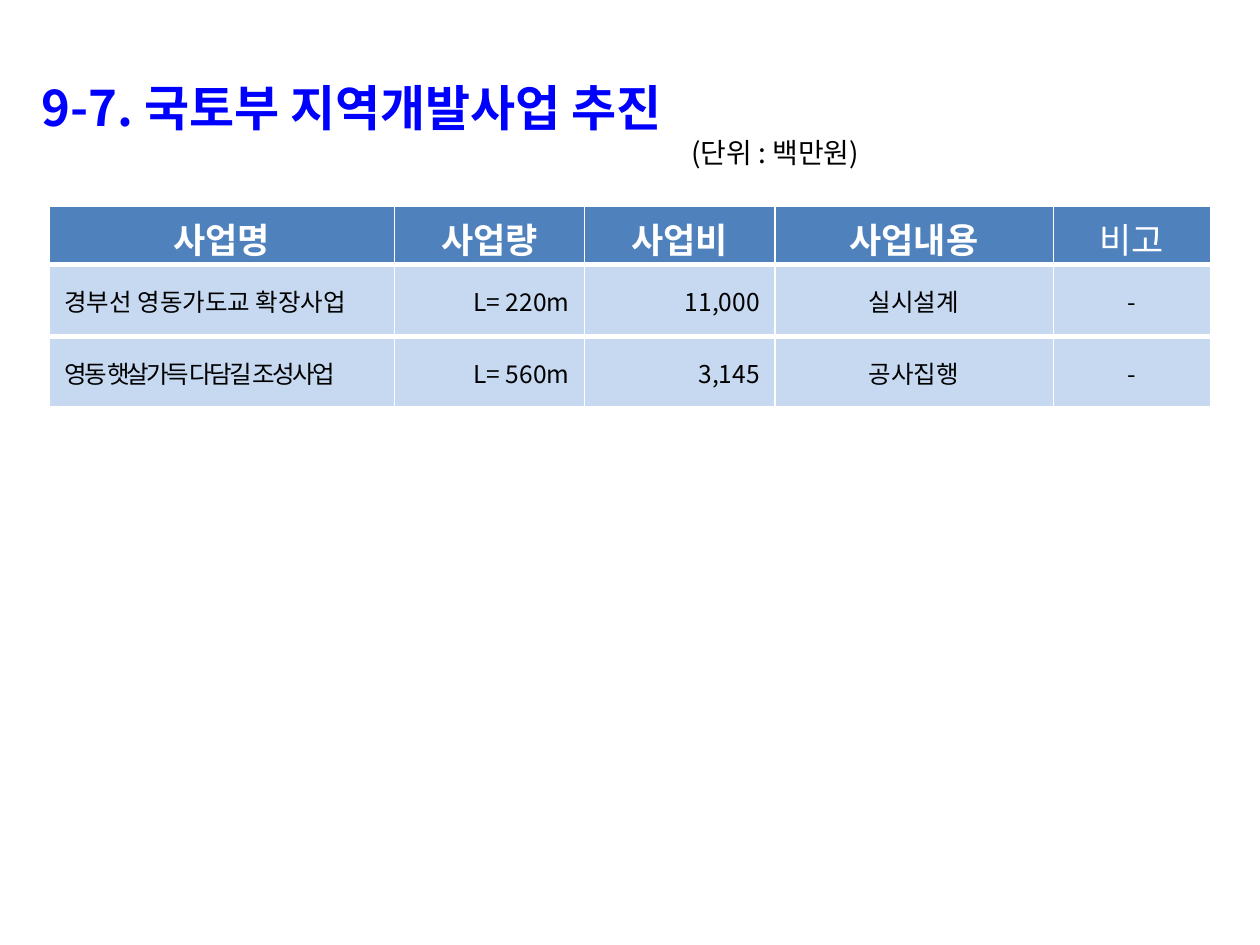
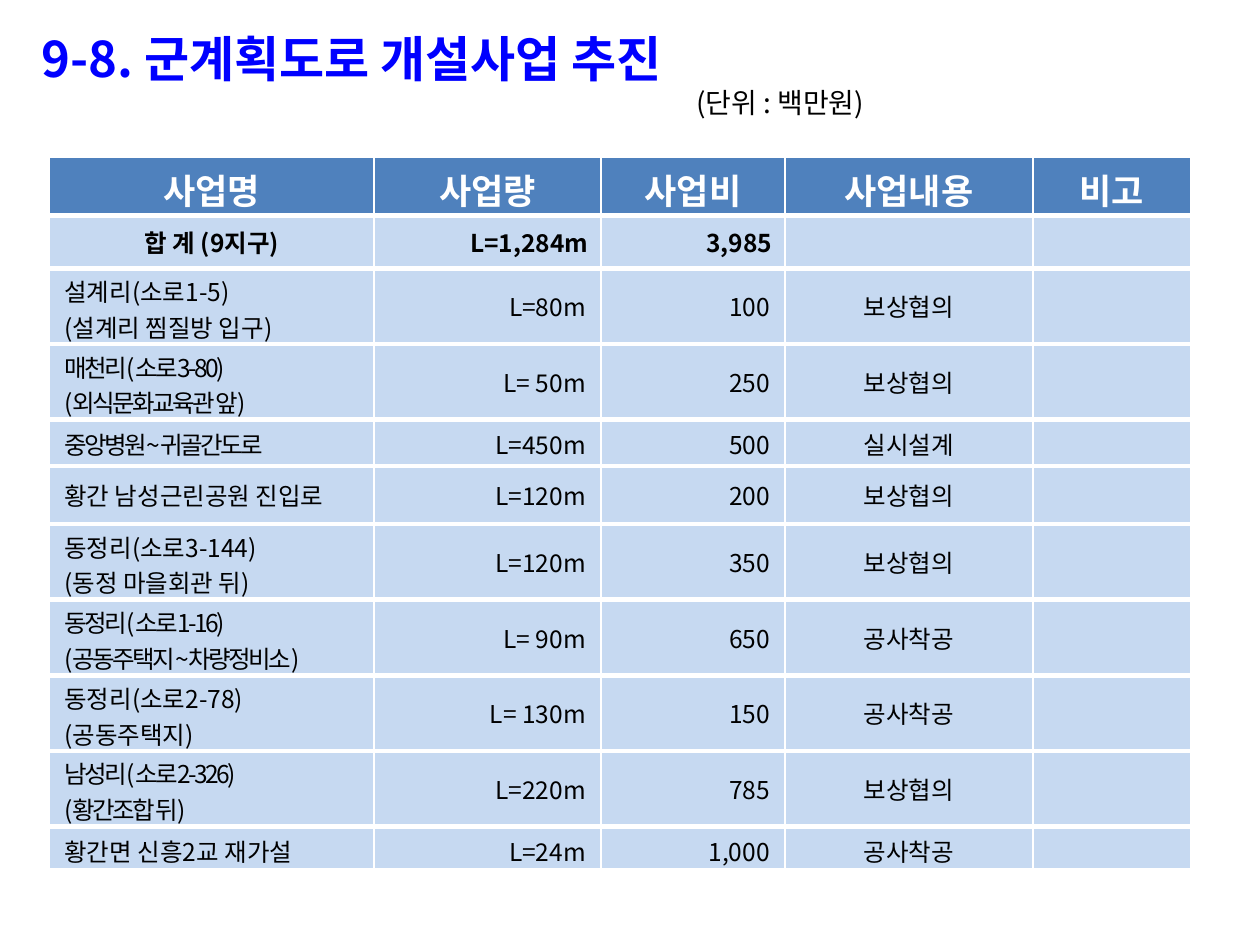
"""Build two slides of county project tables."""
from lxml.etree import SubElement
from pptx import Presentation
from pptx.dml.color import RGBColor
from pptx.enum.text import MSO_ANCHOR, PP_ALIGN
from pptx.oxml.ns import qn
from pptx.util import Inches, Pt

HEADS = ["사업명", "사업량", "사업비", "사업내용", "비고"]
UNIT = "(단위 : 백만원)"
SLIDES = [
    dict(title="9-7. 국토부 지역개발사업 추진", top=0.62, width=9.61, indent=5.16,
         cols=[2.74, 1.51, 1.51, 2.21, 1.25], heights=[0.46, 0.57, 0.57],
         light_heads={"비고"}, total=None, tight={2},
         rows=[
             ("경부선 영동가도교 확장사업", "L= 220m", "11,000", "실시설계", "-"),
             ("영동 햇살가득 다담길 조성사업", "L= 560m", "3,145", "공사집행", "-"),
         ]),
    dict(title="9-8. 군계획도로 개설사업 추진", top=0.23, width=9.45, indent=5.2,
         cols=[2.58, 1.8, 1.46, 1.97, 1.25],
         heights=[0.46, 0.42, 0.6, 0.6, 0.37, 0.46, 0.6, 0.6, 0.6, 0.6, 0.35],
         light_heads=set(), total=1, tight={3, 4, 7, 9},
         rows=[
             ("합 계 (9지구)", "L=1,284m", "3,985", "", ""),
             ("설계리(소로1-5)\n(설계리 찜질방 입구)", "L=80m", "100", "보상협의", ""),
             ("매천리(소로3-80)\n(외식문화교육관 앞)", "L= 50m", "250", "보상협의", ""),
             ("중앙병원~귀골간도로", "L=450m", "500", "실시설계", ""),
             ("황간 남성근린공원 진입로", "L=120m", "200", "보상협의", ""),
             ("동정리(소로3-144)\n(동정 마을회관 뒤)", "L=120m", "350", "보상협의", ""),
             ("동정리(소로1-16)\n(공동주택지~차량정비소)", "L= 90m", "650", "공사착공", ""),
             ("동정리(소로2-78)\n(공동주택지)", "L= 130m", "150", "공사착공", ""),
             ("남성리(소로2-326)\n(황간조합 뒤)", "L=220m", "785", "보상협의", ""),
             ("황간면 신흥2교 재가설", "L=24m", "1,000", "공사착공", ""),
         ]),
]

FONT = "Noto Sans CJK KR"
BLUE = RGBColor(0x00, 0x00, 0xFF)
BLACK = RGBColor(0x00, 0x00, 0x00)
WHITE = RGBColor(0xFF, 0xFF, 0xFF)
HEAD_FILL = RGBColor(0x4F, 0x81, 0xBD)
BODY_FILL = RGBColor(0xC6, 0xD9, 0xF1)
LEFT, CENTER, RIGHT = PP_ALIGN.LEFT, PP_ALIGN.CENTER, PP_ALIGN.RIGHT
ALIGNS = [LEFT, RIGHT, RIGHT, CENTER, CENTER]
TITLE_LEFT, TABLE_LEFT, TABLE_DROP = 0.23, 0.39, 1.02
LINE_HEIGHT, PAD = 1.45, 0.05


def write(p, text, size=14, color=BLACK, bold=False, align=LEFT, spacing=0):
    p.alignment = align
    if not text:
        SubElement(p._p, qn("a:endParaRPr"), sz=str(size * 100))
        return
    r = p.add_run()
    r.text = text
    r.font.name, r.font.size, r.font.bold = FONT, Pt(size), bold
    r.font.color.rgb = color
    rPr = r._r.get_or_add_rPr()
    SubElement(rPr, qn("a:ea"), typeface=FONT)
    if spacing:
        rPr.set("spc", str(int(spacing * 100)))


def add_borders(cell, top):
    tcPr = cell._tc.get_or_add_tcPr()
    for side, width in (("L", 1), ("R", 1), ("T", top), ("B", 3)):
        ln = SubElement(tcPr, qn(f"a:ln{side}"), w=str(Pt(width)))
        fill = SubElement(ln, qn("a:solidFill"))
        SubElement(fill, qn("a:srgbClr"), val=str(WHITE))


def fill_cell(cell, text, height, fill, inset=0.1, top_border=3, size=14, **style):
    add_borders(cell, top_border)
    cell.fill.solid()
    cell.fill.fore_color.rgb = fill
    cell.vertical_anchor = MSO_ANCHOR.MIDDLE
    lines = text.split("\n")
    spare = max(0, height - len(lines) * size * LINE_HEIGHT / 72)
    top = min(PAD, spare)
    cell.margin_left = cell.margin_right = Inches(inset)
    cell.margin_top = Inches(top)
    cell.margin_bottom = Inches(min(PAD, spare - top))
    tf = cell.text_frame
    for i, line in enumerate(lines):
        write(tf.add_paragraph() if i else tf.paragraphs[0], line, size=size, **style)


def add_heading(s, page):
    sp = s.shapes.add_textbox(Inches(TITLE_LEFT), Inches(page["top"]),
                              Inches(page["width"]), Inches(0.9))
    tf = sp.text_frame
    tf.word_wrap = True
    p = tf.paragraphs[0]
    p.line_spacing = 0.9
    write(p, page["title"], size=28, color=BLUE, bold=True)
    p = tf.add_paragraph()
    p.line_spacing, p.space_before = 0.9, Pt(1)
    write(p, UNIT, size=16)
    pPr = p._p.get_or_add_pPr()
    pPr.set("marL", str(Inches(page["indent"])))
    pPr.set("indent", "0")


def add_project_table(s, page):
    cols, heights = page["cols"], page["heights"]
    table = s.shapes.add_table(
        len(heights), len(cols), Inches(TABLE_LEFT), Inches(page["top"] + TABLE_DROP),
        Inches(sum(cols)), Inches(sum(heights))).table
    table.horz_banding = False
    for column, width in zip(table.columns, cols):
        column.width = Inches(width)
    for row, height in zip(table.rows, heights):
        row.height = Inches(height)
    for c, head in enumerate(HEADS):
        fill_cell(table.cell(0, c), head, heights[0], HEAD_FILL, top_border=1, size=20,
                  color=WHITE, bold=head not in page["light_heads"], align=CENTER)
    for n, texts in enumerate(page["rows"], 1):
        total = n == page["total"]
        for c, text in enumerate(texts):
            fill_cell(table.cell(n, c), text, heights[n], BODY_FILL,
                      inset=0.1 if total else 0.12, bold=total,
                      align=CENTER if total and c == 0 else ALIGNS[c],
                      spacing=-1.5 if c == 0 and n in page["tight"] else 0)


def main():
    prs = Presentation()
    prs.slide_width, prs.slide_height = Inches(10), Inches(7.5)
    for page in SLIDES:
        s = prs.slides.add_slide(prs.slide_layouts[6])
        add_heading(s, page)
        add_project_table(s, page)
    prs.save("out.pptx")


if __name__ == "__main__":
    main()
